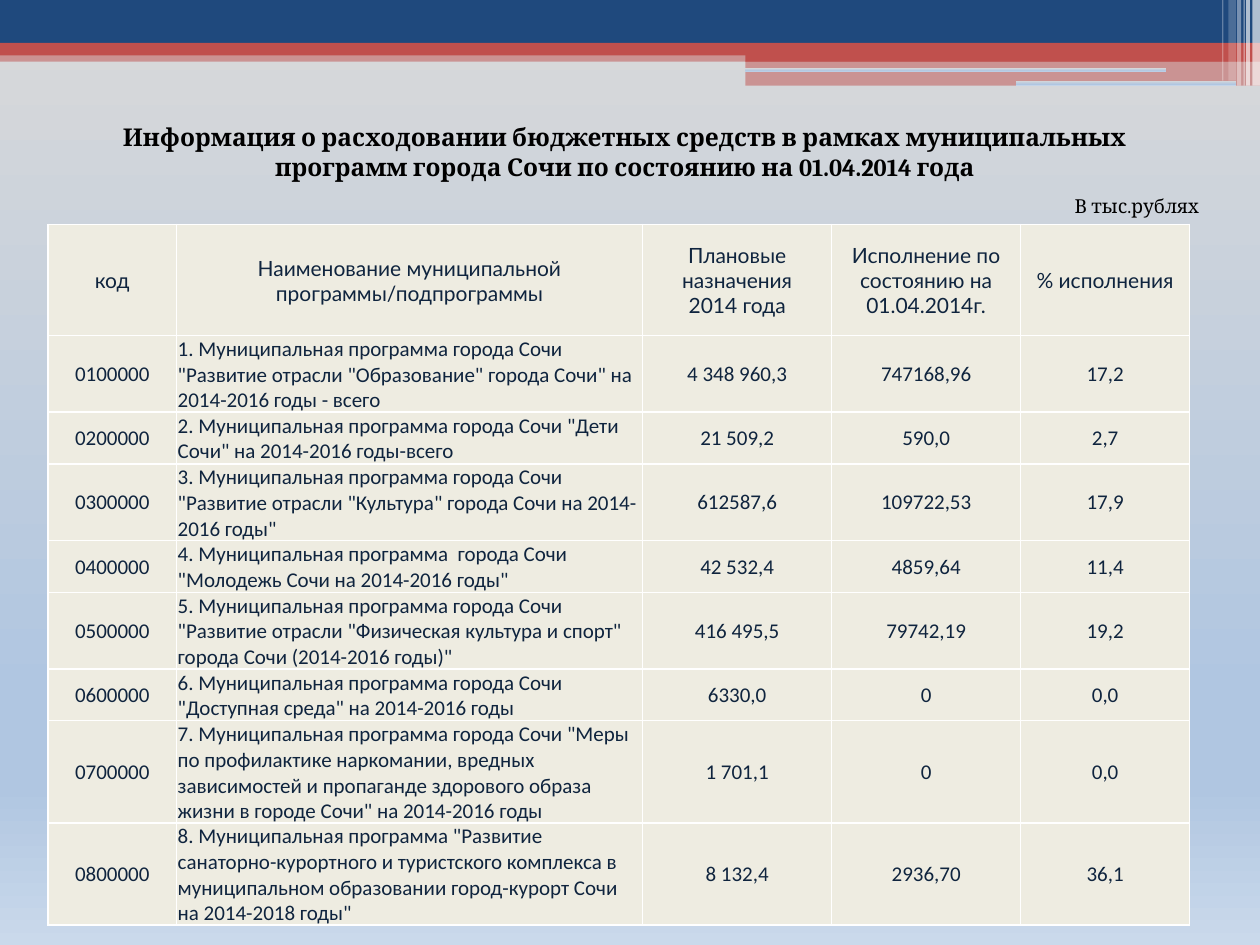
from dataclasses import dataclass

from lxml import etree
from pptx import Presentation
from pptx.dml.color import RGBColor
from pptx.enum import shapes, text
from pptx.oxml import ns
from pptx.util import Pt

NAVY, RED, WHITE, BLACK = "1F497D", "C0504D", "FFFFFF", "000000"
CELL_FILL, CELL_TEXT = "EEECE1", "0F243E"
BACKDROP = [(0, "D9D9D9"), (74, "B0C6E1"), (83, "B0C6E1"), (100, "CAD9EB")]
CENTER, LEFT = text.PP_ALIGN.CENTER, text.PP_ALIGN.LEFT


@dataclass
class Bar:
    """A decorative band; lengths in points, no colour means the backdrop gradient."""
    left: float
    top: float
    width: float
    height: float
    color: str = ""
    opacity: int = 100


@dataclass
class Program:
    code: str
    name: str
    planned: str
    spent: str
    percent: str


BARS = [
    # Horizontal bands
    Bar(0, 28.8, 720, 6.5, RED, 50),
    Bar(0, 0, 720, 24.5, NAVY),
    Bar(0, 24.5, 720, 7.2, RED),
    Bar(426, 28, 294, 7.2, RED),
    Bar(426, 34.6, 294, 14.4, RED, 50),
    # Thin slits showing the backdrop
    Bar(425.5, 38.9, 241.2, 2.2),
    Bar(580.3, 46.1, 126, 2.9),
    # Vertical stripes in the corner
    Bar(715.7, 0, 4.3, 49, WHITE, 65),
    Bar(712.1, 0, 2.2, 49, WHITE, 65),
    Bar(710.6, 0, 0.7, 49, WHITE, 60),
    Bar(707, 0, 2.2, 49, WHITE, 40),
    Bar(702, 0, 4.3, 46.1, WHITE, 20),
    Bar(698.4, 0, 0.7, 46.1, WHITE, 30),
]

TITLE = ("Информация о расходовании бюджетных средств в рамках муниципальных "
         "программ города Сочи по состоянию на 01.04.2014 года")
HEADER = Program("код", "Наименование муниципальной программы/подпрограммы",
                 "Плановые\vназначения\v2014 года",
                 "Исполнение по состоянию на 01.04.2014г.", "% исполнения")
PROGRAMS = [
    Program("0100000", '1. Муниципальная программа города Сочи "Развитие отрасли '
            '"Образование" города Сочи" на 2014-2016 годы - всего',
            "4 348 960,3", "747168,96", "17,2"),
    Program("0200000", '2. Муниципальная программа города Сочи "Дети Сочи" '
            'на 2014-2016 годы-всего', "21 509,2", "590,0", "2,7"),
    Program("0300000", '3. Муниципальная программа города Сочи "Развитие отрасли '
            '"Культура" города Сочи на 2014-2016 годы"',
            "612587,6", "109722,53", "17,9"),
    Program("0400000", '4. Муниципальная программа  города Сочи "Молодежь Сочи '
            'на 2014-2016 годы"', "42 532,4", "4859,64", "11,4"),
    Program("0500000", '5. Муниципальная программа города Сочи "Развитие отрасли '
            '"Физическая культура и спорт" города Сочи (2014-2016 годы)"',
            "416 495,5", "79742,19", "19,2"),
    Program("0600000", '6. Муниципальная программа города Сочи "Доступная среда" '
            'на 2014-2016 годы', "6330,0", "0", "0,0"),
    Program("0700000", '7. Муниципальная программа города Сочи "Меры по профилактике '
            'наркомании, вредных зависимостей и пропаганде здорового образа жизни '
            'в городе Сочи" на 2014-2016 годы', "1 701,1", "0", "0,0"),
    Program("0800000", '8. Муниципальная программа "Развитие санаторно-курортного и '
            'туристского комплекса в муниципальном образовании город-курорт Сочи '
            'на 2014-2018 годы"', "8 132,4", "2936,70", "36,1"),
]
COLUMN_WIDTHS = [73.5, 266.4, 108, 108, 96.5]
HEADER_HEIGHT, ROW_HEIGHT = 63.4, 29.5


def rgb(color: str) -> RGBColor:
    return RGBColor.from_string(color)


def fill_backdrop(fill, element) -> None:
    """Apply the vertical backdrop gradient to a fill inside the element."""
    fill.gradient()
    stops = element.find(".//" + ns.qn("a:gsLst"))
    for stop in list(stops):
        stops.remove(stop)
    for position, color in BACKDROP:
        stop = etree.SubElement(stops, ns.qn("a:gs"), pos=str(position * 1000))
        etree.SubElement(stop, ns.qn("a:srgbClr"), val=color)
    element.find(".//" + ns.qn("a:lin")).set("ang", "5400000")


def draw_bar(slide, bar: Bar) -> None:
    kind = shapes.MSO_SHAPE.RECTANGLE if bar.color else shapes.MSO_SHAPE.ROUNDED_RECTANGLE
    shape = slide.shapes.add_shape(kind, Pt(bar.left), Pt(bar.top),
                                   Pt(bar.width), Pt(bar.height))
    shape.shadow.inherit = False
    shape.line.fill.background()
    if not bar.color:
        fill_backdrop(shape.fill, shape.element)
        return
    shape.fill.solid()
    shape.fill.fore_color.rgb = rgb(bar.color)
    if bar.opacity < 100:
        color = shape.element.spPr.find(".//" + ns.qn("a:srgbClr"))
        etree.SubElement(color, ns.qn("a:alpha"), val=str(bar.opacity * 1000))


def write(frame, content: str, size: float, font: str, color: str,
          bold: bool = False, align=LEFT) -> None:
    paragraph = frame.paragraphs[0]
    paragraph.alignment = align
    for number, line in enumerate(content.split("\v")):
        if number:
            paragraph.add_line_break()
        run = paragraph.add_run()
        run.text = line
        run.font.size, run.font.name, run.font.bold = Pt(size), font, bold
        run.font.color.rgb = rgb(color)


def place_text(shape, left: float, top: float, width: float, height: float) -> None:
    shape.left, shape.top, shape.width, shape.height = map(Pt, (left, top, width, height))
    frame = shape.text_frame
    frame.word_wrap = True
    frame.auto_size = text.MSO_AUTO_SIZE.SHAPE_TO_FIT_TEXT
    frame.vertical_anchor = text.MSO_ANCHOR.TOP


def fill_row(table, row: int, program: Program) -> None:
    values = (program.code, program.name, program.planned, program.spent, program.percent)
    for column, value in enumerate(values):
        cell = table.cell(row, column)
        cell.fill.solid()
        cell.fill.fore_color.rgb = rgb(CELL_FILL)
        cell.margin_left = cell.margin_top = cell.margin_right = Pt(0.7)
        cell.margin_bottom = Pt(0)
        cell.vertical_anchor = text.MSO_ANCHOR.MIDDLE
        is_name = row > 0 and column == 1
        write(cell.text_frame, value, 12, "Calibri" if row else "Lato", CELL_TEXT,
              align=LEFT if is_name else CENTER)


def draw_table(slide) -> None:
    shape = slide.shapes.add_table(len(PROGRAMS) + 1, len(COLUMN_WIDTHS),
                                   Pt(27.4), Pt(128.2), Pt(652.4), Pt(399.6))
    table = shape.table
    table.horz_banding = False
    for column, width in zip(table.columns, COLUMN_WIDTHS):
        column.width = Pt(width)
    for number, program in enumerate([HEADER, *PROGRAMS]):
        table.rows[number].height = Pt(ROW_HEIGHT if number else HEADER_HEIGHT)
        fill_row(table, number, program)
    shape.height = Pt(399.6)


def main() -> None:
    presentation = Presentation()
    presentation.slide_width, presentation.slide_height = Pt(720), Pt(540)
    slide = presentation.slides.add_slide(presentation.slide_layouts[5])

    # Backdrop and decoration
    fill_backdrop(slide.background.fill, slide.element)
    for bar in BARS:
        draw_bar(slide, bar)

    # Budget table
    draw_table(slide)

    # Title and unit of measure
    title = slide.shapes.title
    place_text(title, 36.7, 66.2, 640.8, 41)
    write(title.text_frame, TITLE, 14, "Cambria", BLACK, bold=True, align=CENTER)
    unit = slide.shapes.add_textbox(0, 0, 0, 0)
    place_text(unit, 607, 107.3, 113, 20.9)
    write(unit.text_frame, "В тыс.рублях", 11, "Cambria", BLACK)

    presentation.save("out.pptx")


if __name__ == "__main__":
    main()
